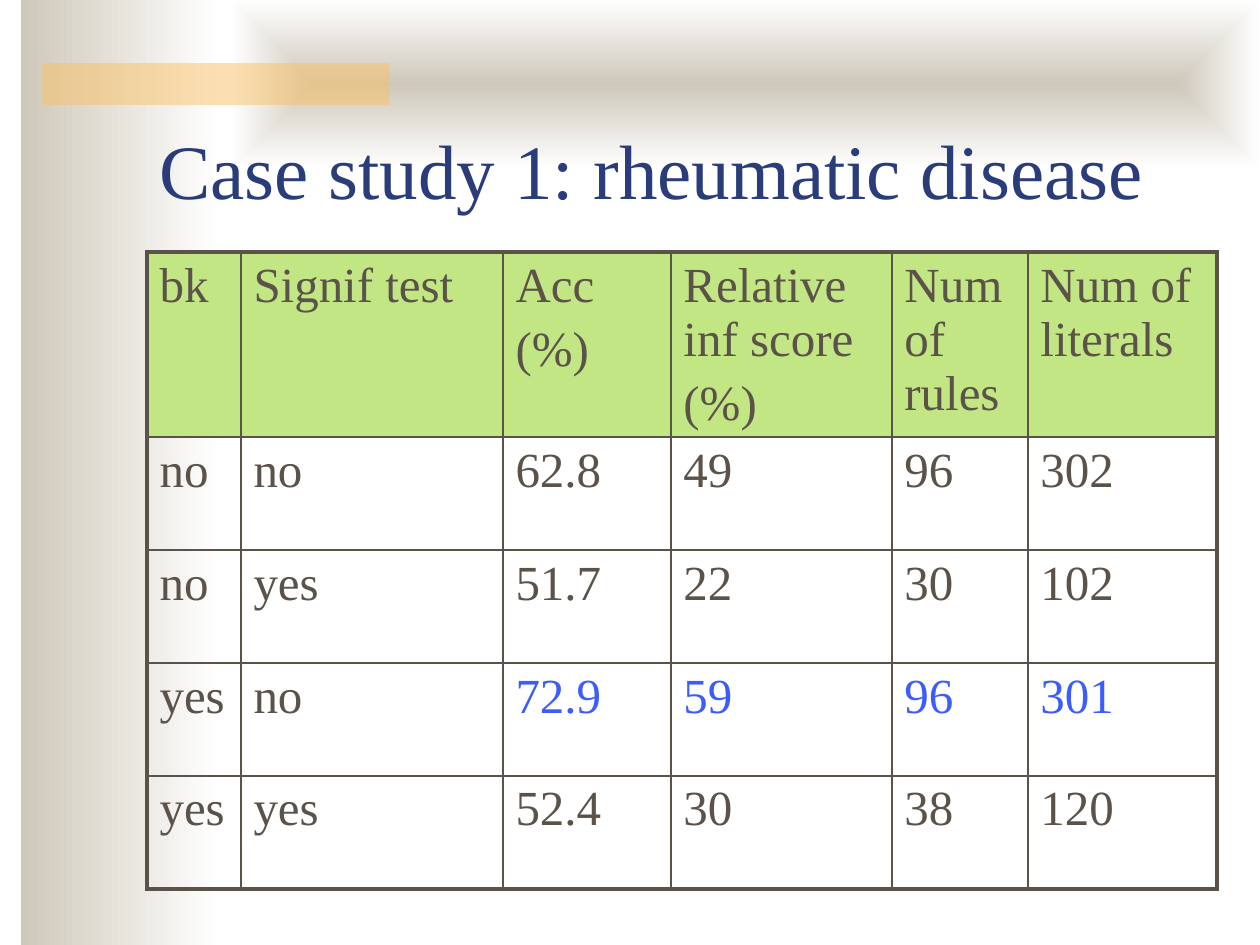
from lxml import etree
from pptx import Presentation
from pptx.dml.color import RGBColor
from pptx.enum.shapes import MSO_SHAPE
from pptx.enum.text import MSO_ANCHOR, MSO_AUTO_SIZE, PP_ALIGN
from pptx.oxml.ns import qn
from pptx.util import Emu, Pt

RECT = MSO_SHAPE.RECTANGLE
BOTTOM = MSO_ANCHOR.BOTTOM
NO_FIT = MSO_AUTO_SIZE.NONE
LEFT = PP_ALIGN.LEFT

FONT = "Times New Roman"
INK, NAVY, BLUE = "5B5249", "2A3D7A", "3C5CFC"
GREEN, SAND, WHITE, AMBER = "C3E684", "CEC8BA", "FFFFFF", "FAC164"
THIN, THICK = Pt(1), Pt(2.25)

COLS = [94, 262, 168, 221, 136, 189]
ROWS = [185, 113, 113, 113, 113]
CELLS = [
    ["bk", "Signif test", "Acc\n(%)", "Relative inf score\n(%)", "Num of rules", "Num of literals"],
    ["no", "no", "62.8", "49", "96", "302"],
    ["no", "yes", "51.7", "22", "30", "102"],
    ["yes", "no", "72.9", "59", "96", "301"],
    ["yes", "yes", "52.4", "30", "38", "120"],
]
BEST_ROW, FIRST_RESULT = 3, 2


def px(n):
    return Emu(round(n * 914400 / 126))


def rgb(color):
    return RGBColor.from_string(color)


class Deck:
    def __init__(self):
        self.prs = Presentation()
        self.prs.slide_width, self.prs.slide_height = px(1260), px(945)
        self.s = self.prs.slides.add_slide(self.prs.slide_layouts[5])

    def put_text(self, tf, text, size, color, space=0):
        tf.text = text
        for i, p in enumerate(tf.paragraphs):
            p.alignment = LEFT
            p.space_before = Pt(space if i else 0)
            for r in p.runs:
                for name, value in {"name": FONT, "size": Pt(size), "bold": False}.items():
                    setattr(r.font, name, value)
                r.font.color.rgb = rgb(color)

    def rect(self, x, y, w, h):
        sp = self.s.shapes.add_shape(RECT, px(x), px(y), px(w), px(h))
        sp.shadow.inherit = False
        sp.line.fill.background()
        return sp

    def tint(self, x, y, w, h, color, alpha):
        sp = self.rect(x, y, w, h)
        sp.fill.solid()
        sp.fill.fore_color.rgb = rgb(color)
        clr = sp._element.spPr.find(".//" + qn("a:srgbClr"))
        etree.SubElement(clr, qn("a:alpha"), val=str(alpha * 1000))

    def gradient(self, x, y, w, h, colors, centred=False):
        sp = self.rect(x, y, w, h)
        sp.fill.gradient()
        sp.fill.gradient_angle = 0
        for i, (stop, color) in enumerate(zip(sp.fill.gradient_stops, colors)):
            stop.position = i
            stop.color.rgb = rgb(color)
        if centred:
            grad = sp._element.spPr.find(qn("a:gradFill"))
            grad.remove(grad.find(qn("a:lin")))
            shade = etree.SubElement(grad, qn("a:path"), {"path": "shape"})
            etree.SubElement(shade, qn("a:fillToRect"), {side: "50000" for side in "ltrb"})

    def title(self, x, y, w, h, text):
        sp = self.s.shapes.title
        self.s.shapes._spTree.append(sp._element)
        for name, value in {"left": x, "top": y, "width": w, "height": h}.items():
            setattr(sp, name, px(value))
        tf = sp.text_frame
        for name, value in {"word_wrap": True, "auto_size": NO_FIT, "vertical_anchor": BOTTOM}.items():
            setattr(tf, name, value)
        self.put_text(tf, text, 44, NAVY)

    def borders(self, cell, widths):
        tcPr = cell._tc.get_or_add_tcPr()
        for i, (side, width) in enumerate(zip("LRTB", widths)):
            ln = etree.Element(qn("a:ln" + side), w=str(width))
            fill = etree.SubElement(ln, qn("a:solidFill"))
            etree.SubElement(fill, qn("a:srgbClr"), val=INK)
            tcPr.insert(i, ln)

    def table(self, x, y, cols, rows, cells):
        last_row, last_col = len(rows) - 1, len(cols) - 1
        frame = self.s.shapes.add_table(len(rows), len(cols), px(x), px(y), px(sum(cols)), px(sum(rows)))
        table = frame.table
        table.first_row = table.horz_banding = False
        for col, w in zip(table.columns, cols):
            col.width = px(w)
        for row, h in zip(table.rows, rows):
            row.height = px(h)
        for i, texts in enumerate(cells):
            for j, text in enumerate(texts):
                cell = table.cell(i, j)
                best = i == BEST_ROW and j >= FIRST_RESULT
                self.put_text(cell.text_frame, text, 28, BLUE if best else INK, 5.6)
                if i == 0:
                    cell.fill.solid()
                    cell.fill.fore_color.rgb = rgb(GREEN)
                else:
                    cell.fill.background()
                outer = [j == 0, j == last_col, i == 0, i == last_row]
                self.borders(cell, [THICK if edge else THIN for edge in outer])


def main():
    deck = Deck()
    deck.gradient(21, 0, 199, 945, [SAND, WHITE])
    deck.gradient(231, 0, 1029, 168, [SAND, WHITE], centred=True)
    deck.tint(42, 63, 347, 42, AMBER, 50)
    deck.title(147, 63, 1071, 158, "Case study 1: rheumatic disease")
    deck.table(147, 252, COLS, ROWS, CELLS)
    deck.prs.save("out.pptx")


if __name__ == "__main__":
    main()
